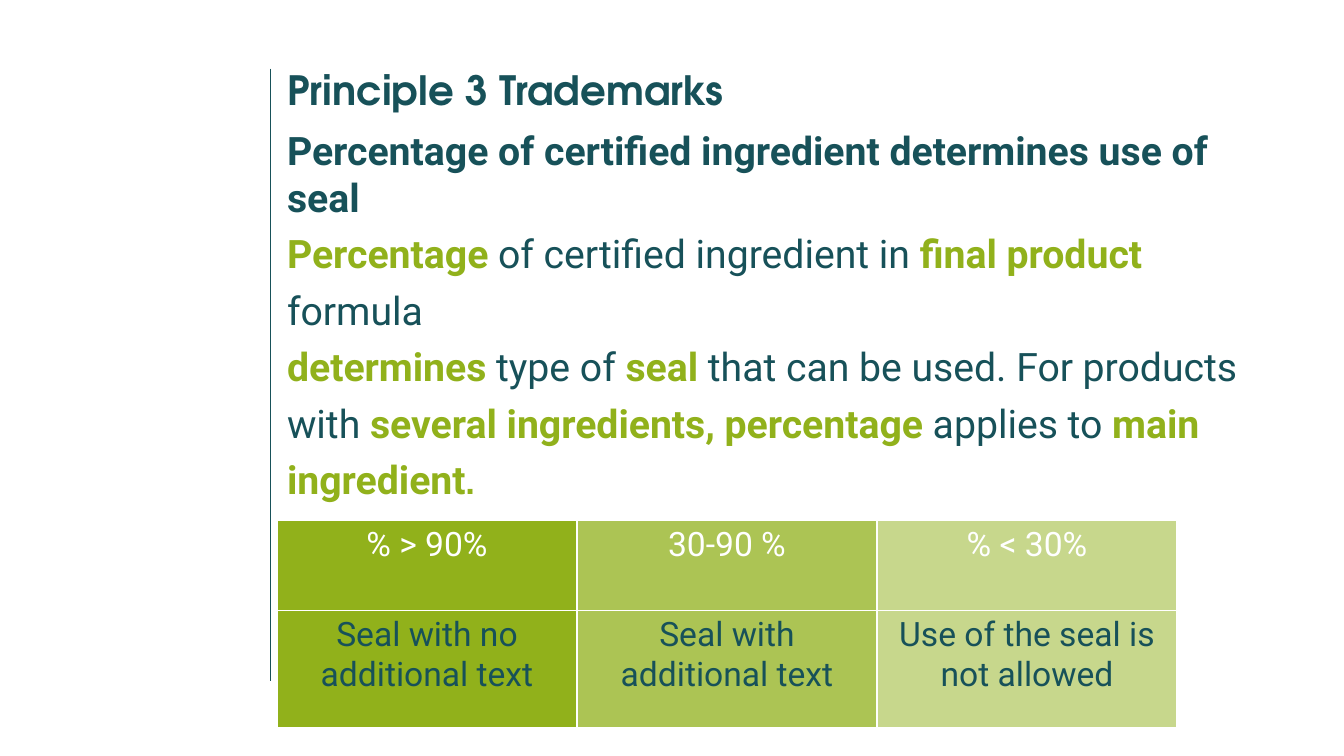
from dataclasses import dataclass
from itertools import product

from lxml.etree import SubElement
from pptx import Presentation
from pptx.dml.color import RGBColor
from pptx.enum.shapes import MSO_CONNECTOR
from pptx.enum.text import MSO_ANCHOR, MSO_AUTO_SIZE, PP_ALIGN
from pptx.oxml import parse_xml
from pptx.oxml.ns import nsdecls, qn
from pptx.slide import Slide
from pptx.table import _Cell
from pptx.util import Cm, Pt


@dataclass(frozen=True)
class Theme:
    dark: RGBColor = RGBColor(0x17, 0x51, 0x59)
    green: RGBColor = RGBColor(0x91, 0xB1, 0x1B)
    white: RGBColor = RGBColor(0xFF, 0xFF, 0xFF)
    head: str = "TeX Gyre Adventor"
    text: str = "Roboto"
    stop: str = "Cabin"
    title: float = 28.8
    body: float = 28
    cell: float = 24


@dataclass(frozen=True)
class Span:
    text: str
    color: RGBColor
    bold: bool = True
    font: str | None = None


@dataclass(frozen=True)
class Line:
    spans: tuple[Span, ...]
    pitch: float = 1.2


@dataclass(frozen=True)
class Column:
    share: str
    rule: str
    alpha: int


THEME = Theme()


def key(text: str) -> Span:
    return Span(text, THEME.green)


def plain(text: str) -> Span:
    return Span(text, THEME.dark, False)


LINES = (
    Line((Span("Percentage of certified ingredient determines use of seal", THEME.dark),), 1.0),
    Line((key("Percentage"), plain(" of certified ingredient in "),
          key("final product "), plain("formula"))),
    Line((key("determines"), plain(" type of "), key("seal"),
          plain(" that can be used. For products with "),
          key("several ingredients, percentage "), plain("applies to "),
          key("main ingredient"), Span(".", THEME.green, True, THEME.stop))),
)

COLUMNS = (
    Column("% > 90%", "Seal with no additional text", 100),
    Column("30-90 %", "Seal with additional text", 75),
    Column("% < 30%", "Use of the seal is not allowed", 50),
)


def add_rule(slide: Slide) -> None:
    rule = slide.shapes.add_connector(
        MSO_CONNECTOR.STRAIGHT, Cm(6.81), Cm(1.73), Cm(6.81), Cm(17.17))
    rule.line.color.rgb = THEME.dark
    rule.line.width = Pt(0.5)
    SubElement(rule._element.spPr, qn("a:effectLst"))


def add_title(slide: Slide) -> None:
    title = slide.shapes.title
    title.left, title.top, title.width, title.height = Cm(6.98), Cm(1.52), Cm(25.58), Cm(1.04)
    frame = title.text_frame
    frame.text = "Principle 3 Trademarks"
    frame.auto_size = MSO_AUTO_SIZE.NONE
    frame.vertical_anchor = MSO_ANCHOR.TOP
    para = frame.paragraphs[0]
    para.alignment = PP_ALIGN.LEFT
    para.font.name = THEME.head
    para.font.size = Pt(THEME.title)
    para.font.bold = True
    para.font.color.rgb = THEME.dark


def add_body(slide: Slide) -> None:
    body = slide.placeholders[1]
    body.left, body.top, body.width, body.height = Cm(6.98), Cm(3.05), Cm(25.12), Cm(11.02)
    frame = body.text_frame
    frame.auto_size = MSO_AUTO_SIZE.NONE
    frame.vertical_anchor = MSO_ANCHOR.TOP
    for index, line in enumerate(LINES):
        para = frame.add_paragraph() if index else frame.paragraphs[0]
        para.line_spacing = line.pitch
        para.space_before = Pt(0)
        props = para._p.get_or_add_pPr()
        props.set("marL", "0")
        props.set("indent", "0")
        SubElement(props, qn("a:buNone"))
        para.font.name = THEME.text
        para.font.size = Pt(THEME.body)
        for span in line.spans:
            run = para.add_run()
            run.text = span.text
            run.font.bold = span.bold
            run.font.color.rgb = span.color
            if span.font:
                run.font.name = span.font


def fill_cell(cell: _Cell, text: str, color: RGBColor, alpha: int) -> None:
    cell.text = text
    para = cell.text_frame.paragraphs[0]
    para.alignment = PP_ALIGN.CENTER
    para.font.name = THEME.text
    para.font.size = Pt(THEME.cell)
    para.font.bold = False
    para.font.color.rgb = color
    cell.fill.solid()
    cell.fill.fore_color.rgb = THEME.green
    props = cell._tc.get_or_add_tcPr()
    if alpha < 100:
        tint = props.find(qn("a:solidFill")).find(qn("a:srgbClr"))
        SubElement(tint, qn("a:alpha")).set("val", str(alpha * 1000))
    for index, side in enumerate("LRTB"):
        props.insert(index, parse_xml(
            f'<a:ln{side} {nsdecls("a")} w="{Pt(1)}"><a:solidFill>'
            f'<a:srgbClr val="{THEME.white}"/></a:solidFill></a:ln{side}>'))


def add_grid(slide: Slide) -> None:
    grid = slide.shapes.add_table(
        2, len(COLUMNS), Cm(6.98), Cm(13.12), Cm(22.68), Cm(5.21)).table
    grid.rows[0].height, grid.rows[1].height = Cm(2.26), Cm(2.95)
    for row, (index, column) in product(range(2), enumerate(COLUMNS)):
        text, color = ((column.share, THEME.white), (column.rule, THEME.dark))[row]
        fill_cell(grid.cell(row, index), text, color, column.alpha)


def main() -> None:
    deck = Presentation()
    deck.slide_width, deck.slide_height = Cm(33.87), Cm(19.05)
    slide = deck.slides.add_slide(deck.slide_layouts[1])
    add_rule(slide)
    add_title(slide)
    add_body(slide)
    add_grid(slide)
    deck.save("out.pptx")


if __name__ == "__main__":
    main()
